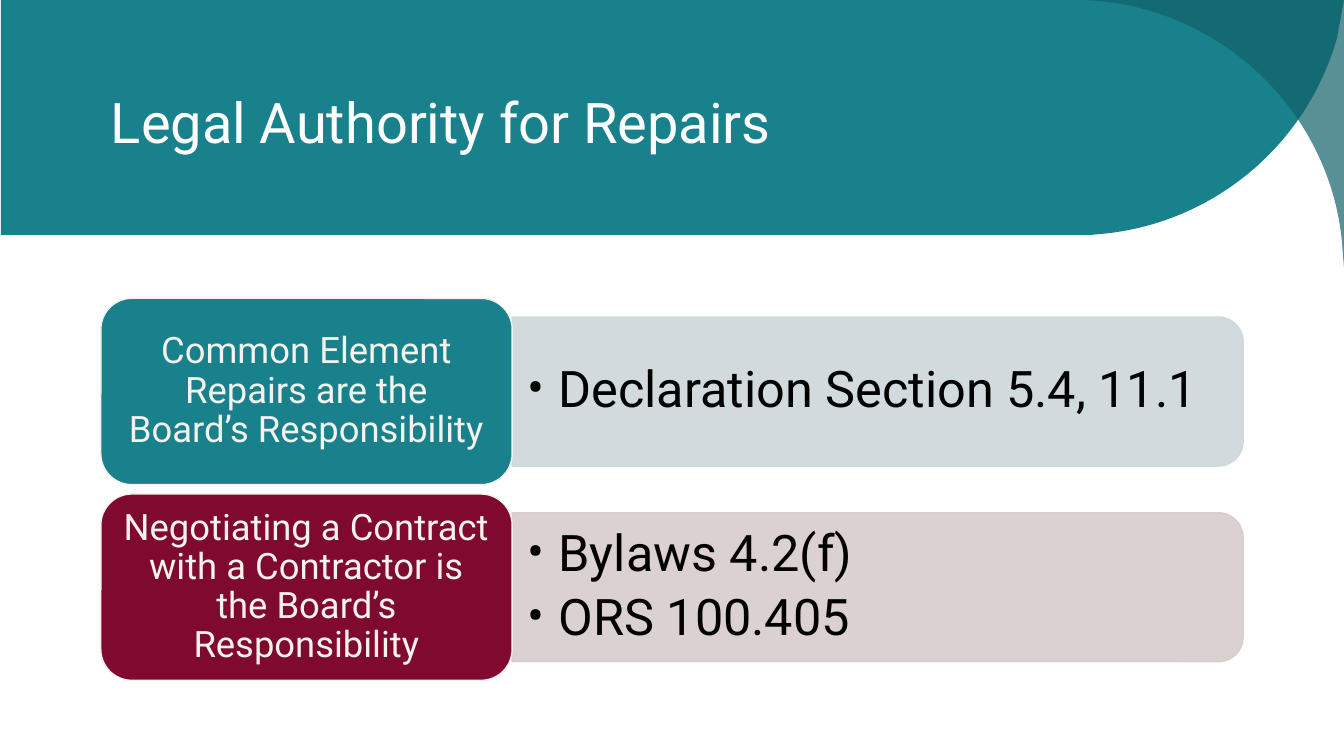
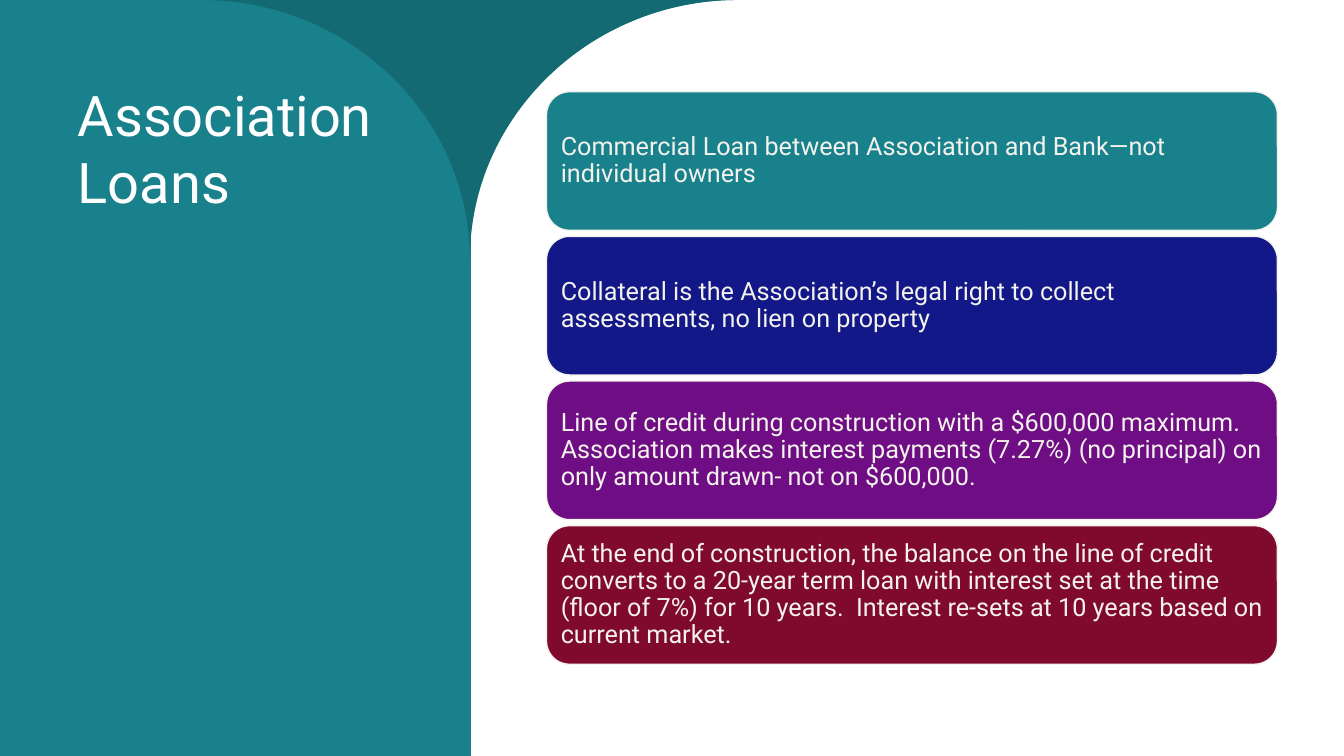
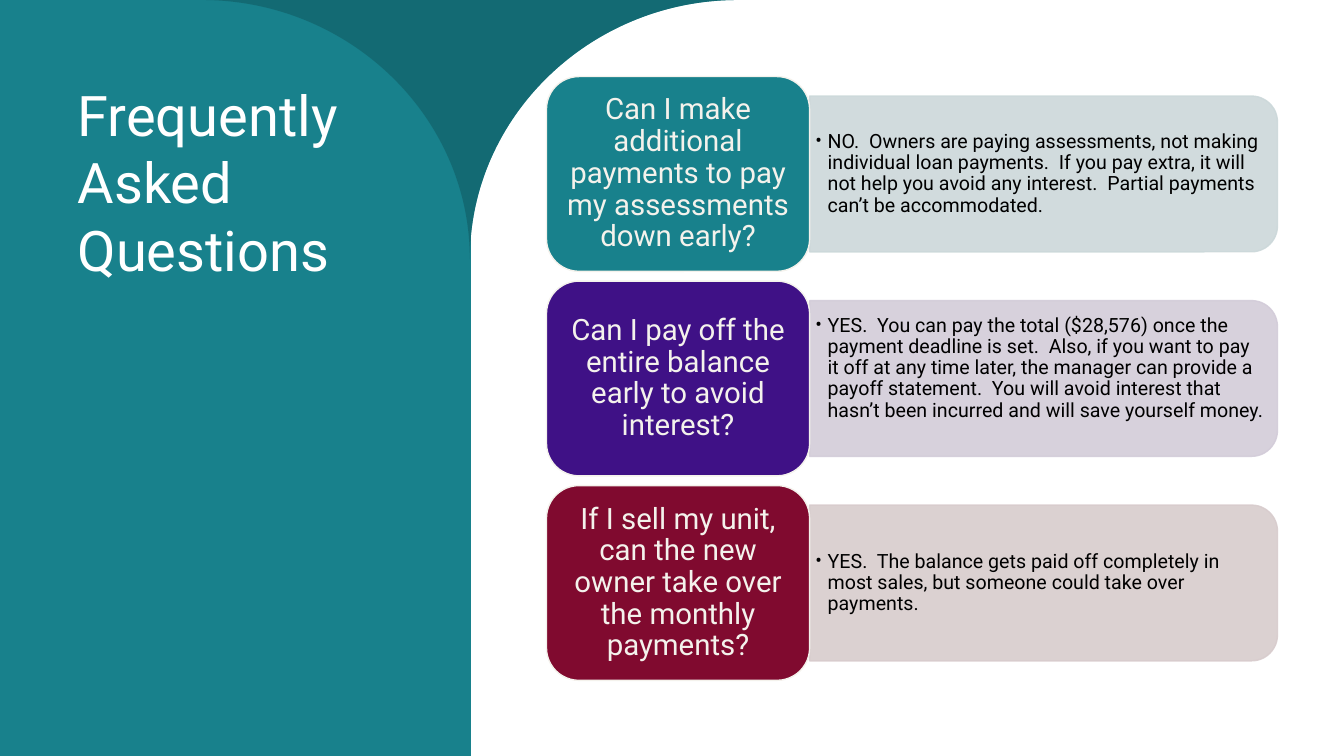
from lxml.etree import Element, SubElement
from pptx import Presentation
from pptx.dml.color import RGBColor
from pptx.enum.shapes import MSO_SHAPE as Shape
from pptx.enum.text import MSO_ANCHOR as Anchor, PP_ALIGN as Align
from pptx.oxml.ns import qn
from pptx.util import Inches, Pt

FONT = "Roboto"
WIDE, HIGH = 13.33, 7.5
SIDE = 4.67          # width of the side panel
ROUND = 2.66         # reach of the large curves
PULL = 0.45          # place of a curve's control points along its reach

WHITE = RGBColor(0xFF, 0xFF, 0xFF)
BLACK = RGBColor(0, 0, 0)
CREAM = RGBColor(0xF4, 0xF2, 0xEC)
TEAL = RGBColor(0x18, 0x81, 0x8C)
DEEP = RGBColor(0x12, 0x61, 0x69)
NAVY = RGBColor(0x13, 0x18, 0x88)
INDIGO = RGBColor(0x3F, 0x11, 0x86)
PURPLE = RGBColor(0x6F, 0x0E, 0x84)
WINE = RGBColor(0x80, 0x0A, 0x2F)
PALE_TEAL = RGBColor(0xCC, 0xD8, 0xDA)
PALE_INDIGO = RGBColor(0xD3, 0xCC, 0xD9)
PALE_WINE = RGBColor(0xD8, 0xCC, 0xCD)


# Shared helpers

def paint(shape, fill, line=None, alpha=100):
    """Give a shape a flat fill and an optional 1 pt line."""
    shape.shadow.inherit = False
    shape.fill.solid()
    shape.fill.fore_color.rgb = fill
    if line is None:
        shape.line.fill.background()
    else:
        shape.line.color.rgb = line
        shape.line.width = Pt(1)
    if alpha < 100:
        for color in shape.element.spPr.iter(qn("a:srgbClr")):
            SubElement(color, qn("a:alpha"), val=str(alpha * 1000))


def add_box(slide, kind, box, fill, line=None, alpha=100):
    shape = slide.shapes.add_shape(kind, *map(Inches, box))
    paint(shape, fill, line, alpha)
    return shape


def add_curve(slide, points, bends, fill, alpha=100):
    """Draw an outline; each bend is the index of a curve's first control."""
    first, *rest = [(Inches(x), Inches(y)) for x, y in points]
    pen = slide.shapes.build_freeform(*first)
    pen.add_line_segments(rest, close=True)
    shape = pen.convert_to_shape()
    outline = next(shape.element.iter(qn("a:path")))
    steps = list(outline)
    for bend in bends:
        curve = Element(qn("a:cubicBezTo"))
        steps[bend].addprevious(curve)
        for step in steps[bend:bend + 3]:
            curve.append(step[0])
            outline.remove(step)
    paint(shape, fill, alpha=alpha)


def write(shape, lines, size, color, side, edge, align=Align.LEFT, bullet=False):
    """Fill a shape with centred-height text; side and edge are its insets."""
    frame = shape.text_frame
    frame.word_wrap = True
    frame.vertical_anchor = Anchor.MIDDLE
    frame.margin_left = frame.margin_right = Inches(side)
    frame.margin_top = frame.margin_bottom = Inches(edge)
    frame.text = "\n".join(lines)
    for para in frame.paragraphs:
        para.alignment = align
        para.line_spacing = 0.9
        para.font.name, para.font.size = FONT, Pt(size)
        para.font.color.rgb = color
        if bullet:
            para.space_after = Pt(size * 0.175)
            props = para._p.get_or_add_pPr()
            indent = Inches(size / 116)
            props.set("marL", str(indent))
            props.set("indent", str(-indent))
            # The bullet font and sign come before the default run format
            sign = Element(qn("a:buChar"), char="•")
            face = Element(qn("a:buFont"), typeface=FONT)
            run = props.find(qn("a:defRPr"))
            for part in (face, sign):
                if run is None:
                    props.append(part)
                else:
                    run.addprevious(part)


def set_title(slide, text, box, anchor):
    """Format the title and bring it in front of the bands."""
    title = slide.shapes.title
    title.element.getparent().append(title.element)
    title.left, title.top, title.width, title.height = map(Inches, box)
    frame = title.text_frame
    frame.text = text
    frame.word_wrap = True
    frame.vertical_anchor = anchor
    para = frame.paragraphs[0]
    para.alignment = Align.LEFT
    para.font.name, para.font.size = FONT, Pt(40)
    para.font.color.rgb = WHITE


# Slide types

def top_slide(deck, text):
    """Slide with a title band along the top."""
    slide = deck.slides.add_slide(deck.slide_layouts[5])
    band = [(WIDE, 0), (0.01, 0), (0.01, 2.33), (10.83, 2.33), (10.94, 2.32),
            (12.05, 2.21), (12.96, 1.43), (13.26, 0.38)]
    add_curve(slide, band, [5], TEAL)
    corner = [(10.75, 0), (WIDE, 0), (WIDE, ROUND), (13.31, 2.4),
              (13.19, 1.14), (12.17, 0.13), (10.9, 0.01)]
    add_curve(slide, corner, [4], DEEP, 70)
    set_title(slide, text, (1, 0.49, 10.84, 1.42), Anchor.MIDDLE)
    return slide


def side_slide(deck, text):
    """Slide with a title panel on the left."""
    slide = deck.slides.add_slide(deck.slide_layouts[5])
    add_box(slide, Shape.RECTANGLE, (0, 0, SIDE, HIGH), TEAL)
    mid, low = 4.66, 2.57
    near, high = ROUND * PULL, low * PULL
    flare = [(mid - ROUND, 0), (mid + ROUND, 0),
             (mid + near, 0), (mid, high), (mid, low),
             (mid, high), (mid - near, 0), (mid - ROUND, 0)]
    add_curve(slide, flare, [2, 5], TEAL)
    add_curve(slide, flare, [2, 5], DEEP, 70)
    set_title(slide, text, (0.67, 0.75, 3.66, 4), Anchor.TOP)
    return slide


# Content regions

def add_row(slide, box, split, sizes, row):
    """Label on the left, pale panel with bullets on the right."""
    x, y, w, h = box
    big, small = sizes
    label, lines, fill, pale, lift = row
    left, wide, tall = x + split, w - split, h * 0.8
    top = y + h * 0.1

    # The panel is a tall tab, turned so that its round end faces right
    tab = (left + (wide - tall) / 2, top + (tall - wide) / 2, tall, wide)
    panel = add_box(slide, Shape.ROUND_2_SAME_RECTANGLE, tab, pale, pale, 90)
    panel.rotation = 90
    pad = tall * 0.05
    area = (left, top + pad - lift, wide - pad, tall - 2 * pad)
    note = slide.shapes.add_textbox(*map(Inches, area))
    write(note, lines, small, BLACK, small / 240, small / 480, bullet=True)

    head = add_box(slide, Shape.ROUNDED_RECTANGLE, (x, y, split, h), fill, CREAM)
    write(head, [label], big, CREAM, big / 240, big / 480, Align.CENTER)


def add_rows(slide, box, split, sizes, rows):
    """Stack rows with gaps of 5 % of their height."""
    x, y, w, h = box
    tall = h / (1.05 * len(rows) - 0.05)
    for i, row in enumerate(rows):
        add_row(slide, (x, y + i * tall * 1.05, w, tall), split, sizes, row)


def add_cards(slide, box, cards):
    """Stack of coloured cards with equal gaps."""
    x, y, w, h = box
    gap, size = 0.06, 18
    tall = (h - gap * (len(cards) - 1)) / len(cards)
    for i, (text, fill) in enumerate(cards):
        place = (x, y + i * (tall + gap), w, tall)
        card = add_box(slide, Shape.ROUNDED_RECTANGLE, place, fill, CREAM)
        write(card, [text], size, CREAM, size / 240, size / 240)


# Content: label, bullets, label colour, panel colour, text lift

LEGAL = [
    ("Common Element Repairs are the Board’s Responsibility",
     ["Declaration Section 5.4, 11.1"], TEAL, PALE_TEAL, 0),
    ("Negotiating a Contract with a Contractor is the Board’s Responsibility",
     ["Bylaws 4.2(f)", "ORS 100.405"], WINE, PALE_WINE, 0),
]
LOANS = [
    ("Commercial Loan between Association and Bank—not individual owners", TEAL),
    ("Collateral is the Association’s legal right to collect assessments, "
     "no lien on property", NAVY),
    ("Line of credit during construction with a $600,000 maximum.  Association "
     "makes interest payments (7.27%) (no principal) on only amount drawn- "
     "not on $600,000.", PURPLE),
    ("At the end of construction, the balance on the line of credit converts to "
     "a 20-year term loan with interest set at the time (floor of 7%) for 10 "
     "years.  Interest re-sets at 10 years based on current market.", WINE),
]
ASKED = [
    ("Can I make additional payments to pay my assessments down early?",
     ["NO.  Owners are paying assessments, not making individual loan payments.  "
      "If you pay extra, it will not help you avoid any interest.  Partial "
      "payments can’t be accommodated."], TEAL, PALE_TEAL, 0),
    ("Can I pay off the entire balance early to avoid interest?",
     ["YES.  You can pay the total ($28,576) once the payment deadline is set.  "
      "Also, if you want to pay it off at any time later, the manager can provide "
      "a payoff statement.  You will avoid interest that hasn’t been incurred and "
      "will save yourself money."], INDIGO, PALE_INDIGO, 0.1),
    ("If I sell my unit, can the new owner take over the monthly payments?",
     ["YES.  The balance gets paid off completely in most sales, but someone "
      "could take over payments."], WINE, PALE_WINE, 0),
]


def main():
    deck = Presentation()
    deck.slide_width, deck.slide_height = Inches(WIDE), Inches(HIGH)

    legal = top_slide(deck, "Legal Authority for Repairs")
    add_rows(legal, (1, 2.96, 11.33, 3.79), 4.08, (26, 36), LEGAL)

    loans = side_slide(deck, "Association Loans")
    add_cards(loans, (5.42, 0.91, 7.25, 5.68), LOANS)

    asked = side_slide(deck, "Frequently Asked Questions")
    add_rows(asked, (5.42, 0.76, 7.25, 5.99), 2.61, (21, 14), ASKED)

    deck.save("out.pptx")


if __name__ == "__main__":
    main()
